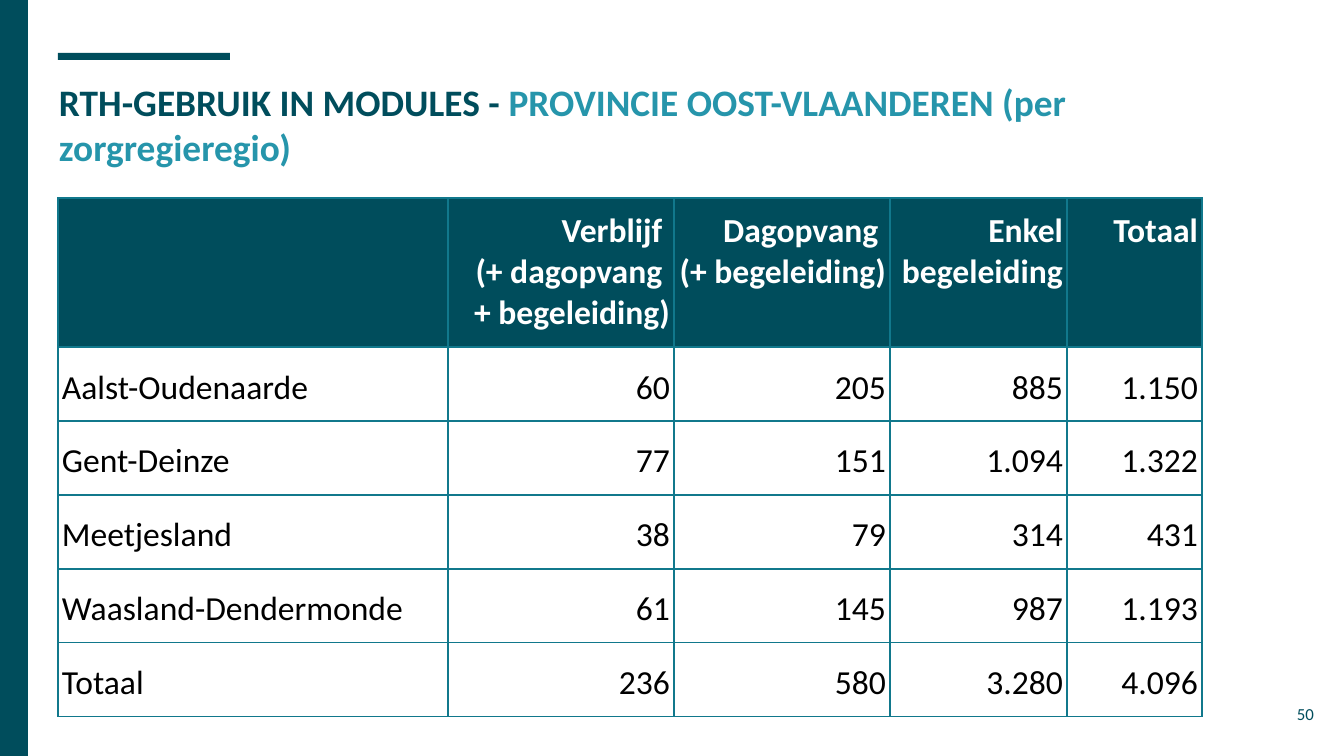
from typing import NamedTuple

from lxml import etree
from pptx import Presentation
from pptx.dml.color import RGBColor
from pptx.enum.shapes import MSO_SHAPE
from pptx.enum.text import MSO_ANCHOR, MSO_AUTO_SIZE, PP_ALIGN
from pptx.oxml.ns import qn
from pptx.util import Emu, Pt

RECT = MSO_SHAPE.RECTANGLE
LEFT, RIGHT = PP_ALIGN.LEFT, PP_ALIGN.RIGHT
TOP, MIDDLE, BOTTOM = MSO_ANCHOR.TOP, MSO_ANCHOR.MIDDLE, MSO_ANCHOR.BOTTOM
NO_AUTOFIT = MSO_AUTO_SIZE.NONE

PETROL = RGBColor(0x00, 0x4D, 0x5C)
TEAL = RGBColor(0x26, 0x95, 0xAB)
BORDER = RGBColor(0x11, 0x78, 0x8C)
WHITE = RGBColor(0xFF, 0xFF, 0xFF)
BLACK = RGBColor(0x00, 0x00, 0x00)

FONT = "Calibri"
EMU_PER_PX = 914400 / 134.4
INSET = 13
CELL_SIDE = 4
HEADER_HEIGHT = 149
ROW_HEIGHT = 74


class Box(NamedTuple):
    x: int
    y: int
    w: int
    h: int


class Column(NamedTuple):
    header: tuple
    values: tuple
    width: int
    align: PP_ALIGN = RIGHT


BARS = (Box(58, 53, 172, 7), Box(0, 0, 28, 756))
TITLE_BOX = Box(46, 66, 1253, 112)
NUMBER_BOX = Box(1246, 685, 81, 58)
TABLE_X, TABLE_Y = 58, 198

COLUMNS = (
    Column((), ("Aalst-Oudenaarde", "Gent-Deinze", "Meetjesland",
                "Waasland-Dendermonde", "Totaal"), 390, LEFT),
    Column(("Verblijf ", "(+ dagopvang \v+ begeleiding)"),
           ("60", "77", "38", "61", "236"), 226),
    Column(("Dagopvang ", "(+ begeleiding)"),
           ("205", "151", "79", "145", "580"), 216),
    Column(("Enkel begeleiding",),
           ("885", "1.094", "314", "987", "3.280"), 177),
    Column(("Totaal",),
           ("1.150", "1.322", "431", "1.193", "4.096"), 135),
)


def px(n: int) -> Emu:
    return Emu(round(n * EMU_PER_PX))


def place(box: Box) -> tuple:
    return tuple(px(n) for n in box)


def add_text(p, text: str, *, size=18, color=BLACK, bold=False,
             align=LEFT, spacing=1.0) -> None:
    p.alignment = align
    p.line_spacing = spacing
    for i, line in enumerate(text.split("\v")):
        if i:
            p.add_line_break()
        r = p.add_run()
        r.text = line
        r.font.name = FONT
        r.font.size = Pt(size)
        r.font.bold = bold
        r.font.color.rgb = color


def set_frame(tf, anchor: MSO_ANCHOR) -> None:
    tf.word_wrap = True
    tf.auto_size = NO_AUTOFIT
    tf.vertical_anchor = anchor
    tf.margin_left = tf.margin_right = px(INSET)
    tf.margin_top = tf.margin_bottom = px(INSET)


def add_bar(s, box: Box) -> None:
    sp = s.shapes.add_shape(RECT, *place(box))
    sp.shadow.inherit = False
    sp.fill.solid()
    sp.fill.fore_color.rgb = PETROL
    sp.line.fill.background()


def add_title(s) -> None:
    sp = s.shapes.title
    sp.left, sp.top, sp.width, sp.height = place(TITLE_BOX)
    set_frame(sp.text_frame, TOP)
    p = sp.text_frame.paragraphs[0]
    add_text(p, "RTH-GEBRUIK IN MODULES - ", size=20, color=PETROL, bold=True)
    add_text(p, "PROVINCIE OOST-VLAANDEREN (per zorgregieregio)",
             size=20, color=TEAL, bold=True)


def set_borders(cell) -> None:
    tcPr = cell._tc.get_or_add_tcPr()
    for side in ("L", "R", "T", "B"):
        ln = etree.SubElement(tcPr, qn(f"a:ln{side}"), w=str(Pt(0.75)))
        fill = etree.SubElement(ln, qn("a:solidFill"))
        etree.SubElement(fill, qn("a:srgbClr"), val=str(BORDER))


def fill_cell(cell, lines: tuple, anchor: MSO_ANCHOR, fill=None, **fmt) -> None:
    cell.margin_left = cell.margin_right = px(CELL_SIDE)
    cell.margin_top = cell.margin_bottom = px(INSET)
    cell.vertical_anchor = anchor
    set_borders(cell)
    if fill is None:
        cell.fill.background()
    else:
        cell.fill.solid()
        cell.fill.fore_color.rgb = fill
    tf = cell.text_frame
    for i, line in enumerate(lines):
        p = tf.add_paragraph() if i else tf.paragraphs[0]
        add_text(p, line, **fmt)


def add_usage_table(s) -> None:
    heights = [HEADER_HEIGHT] + [ROW_HEIGHT] * len(COLUMNS[0].values)
    box = Box(TABLE_X, TABLE_Y, sum(c.width for c in COLUMNS), sum(heights))
    table = s.shapes.add_table(len(heights), len(COLUMNS), *place(box)).table
    table.horz_banding = False
    for row, height in zip(table.rows, heights):
        row.height = px(height)
    for j, col in enumerate(COLUMNS):
        table.columns[j].width = px(col.width)
        fill_cell(table.cell(0, j), col.header, TOP, PETROL,
                  color=WHITE, bold=True, align=col.align)
        for i, value in enumerate(col.values, 1):
            fill_cell(table.cell(i, j), (value,), BOTTOM,
                      align=col.align, spacing=1.15)


def add_slide_number(s) -> None:
    tf = s.shapes.add_textbox(*place(NUMBER_BOX)).text_frame
    set_frame(tf, MIDDLE)
    add_text(tf.paragraphs[0], "50", size=9, color=PETROL, align=RIGHT)


def main() -> None:
    prs = Presentation()
    prs.slide_width, prs.slide_height = px(1344), px(756)
    s = prs.slides.add_slide(prs.slide_layouts[5])
    for bar in BARS:
        add_bar(s, bar)
    add_title(s)
    add_usage_table(s)
    add_slide_number(s)
    prs.save("out.pptx")


if __name__ == "__main__":
    main()
